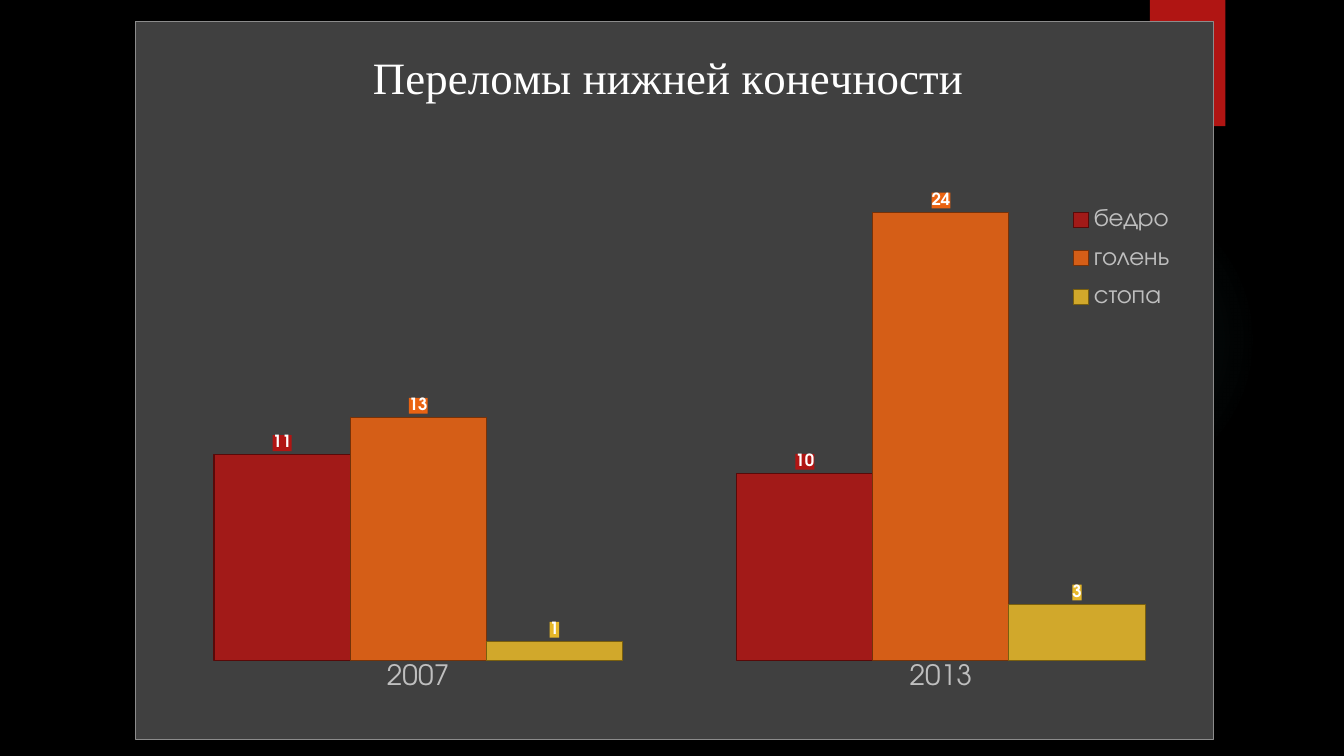
import lxml.etree
import pptx
import pptx.chart.data
import pptx.dml.color
import pptx.enum.chart
import pptx.enum.shapes
import pptx.oxml
import pptx.oxml.ns
import pptx.util

Cm, Pt, qn = pptx.util.Cm, pptx.util.Pt, pptx.oxml.ns.qn
XL = pptx.enum.chart
SHAPE = pptx.enum.shapes.MSO_SHAPE
NS = ('xmlns:a="http://schemas.openxmlformats.org/drawingml/2006/main" '
      'xmlns:c="http://schemas.openxmlformats.org/drawingml/2006/chart"')
FONT = "TeX Gyre Adventor"
WHITE, GREY = "FFFFFF", "BFBFBF"
YEARS = ["2007", "2013"]
SERIES = [
    ("бедро", (11, 10), "B01513", "580A09"),
    ("голень", (13, 24), "EA6312", "753209"),
    ("стопа", (1, 3), "E6B729", "795F0E"),
]


def rgb(color):
    """Turn a hex string into a colour."""
    return pptx.dml.color.RGBColor.from_string(color)


def set_fill(fill, color):
    """Make a fill solid in the given colour."""
    fill.solid()
    fill.fore_color.rgb = rgb(color)


def set_font(font, size, color, name=FONT, bold=False):
    """Set size, colour, typeface and weight of a font."""
    font.size, font.name, font.bold = Pt(size), name, bold
    font.color.rgb = rgb(color)


def shape_props(color, line=""):
    """Build chart shape properties with a solid fill and an optional line."""
    return pptx.oxml.parse_xml(
        f'<c:spPr {NS}><a:solidFill><a:srgbClr val="{color}"/></a:solidFill>{line}</c:spPr>')


def set_layout(parent, index, x, y, w, h, inner=False):
    """Place a chart part by fractions of the chart area."""
    for old in parent.findall(qn("c:layout")):
        parent.remove(old)
    target = '<c:layoutTarget val="inner"/>' if inner else ""
    modes = '<c:xMode val="edge"/><c:yMode val="edge"/>'
    sizes = "".join(f'<c:{k} val="{v}"/>' for k, v in zip("xywh", (x, y, w, h)))
    parent.insert(index, pptx.oxml.parse_xml(
        f"<c:layout {NS}><c:manualLayout>{target}{modes}{sizes}</c:manualLayout></c:layout>"))


def add_plain_shape(s, kind, x, y, w, h):
    """Add a shape without line or shadow."""
    sp = s.shapes.add_shape(kind, Cm(x), Cm(y), Cm(w), Cm(h))
    sp.shadow.inherit = False
    sp.line.fill.background()
    return sp


def add_backdrop(s, x, y):
    """Draw the faint round glow and the red tab from the given corner."""
    glow = add_plain_shape(s, SHAPE.OVAL, x, y + 4.65, 7.82, 7.82)
    stops = "".join(
        f'<a:gs pos="{pos}000"><a:srgbClr val="50B9C1"><a:alpha val="{alpha}000"/></a:srgbClr></a:gs>'
        for pos, alpha in ((0, 7), (36, 6), (69, 0)))
    glow._element.spPr.find(qn("a:prstGeom")).addnext(pptx.oxml.parse_xml(
        f'<a:gradFill {NS}><a:gsLst>{stops}</a:gsLst><a:path path="circle">'
        '<a:fillToRect l="50000" t="50000" r="50000" b="50000"/></a:path></a:gradFill>'))
    tab = add_plain_shape(s, SHAPE.RECTANGLE, x + 5.08, y, 1.9, 3.18)
    set_fill(tab.fill, "B01513")


def format_series(series, color, outline):
    """Colour one series and its value labels."""
    set_fill(series.format.fill, color)
    clr = series.format.fill._xPr.find(".//" + qn("a:srgbClr"))
    lxml.etree.SubElement(clr, qn("a:alpha"), val="88000")
    series.format.line.color.rgb = rgb(outline)
    series.format.line.width = Pt(0.75)
    labels = series.data_labels
    labels.show_value = True
    labels.position = XL.XL_LABEL_POSITION.OUTSIDE_END
    set_font(labels.font, 12, WHITE, bold=True)
    labels._element.find(qn("c:txPr")).addprevious(shape_props(color))


def format_axes(chart):
    """Show only the years and fix the hidden value scale."""
    years, values = chart.category_axis, chart.value_axis
    years.major_tick_mark = years.minor_tick_mark = XL.XL_TICK_MARK.NONE
    years.format.line.fill.background()
    set_font(years.tick_labels.font, 20, GREY)
    values.visible = values.has_major_gridlines = False
    values.minimum_scale, values.maximum_scale = 0, 30


def add_fracture_chart(s, x, y, w, h):
    """Add the column chart of fractures in the given box."""
    data = pptx.chart.data.CategoryChartData()
    data.categories = YEARS
    for name, counts, _, _ in SERIES:
        data.add_series(name, counts)
    chart = s.shapes.add_chart(XL.XL_CHART_TYPE.COLUMN_CLUSTERED,
                               Cm(x), Cm(y), Cm(w), Cm(h), data).chart
    set_font(chart.font, 10, WHITE)
    border = '<a:ln w="6350"><a:solidFill><a:srgbClr val="8C8C8C"/></a:solidFill></a:ln>'
    chart._chartSpace.find(qn("c:txPr")).addprevious(shape_props("404040", border))

    p = chart.chart_title.text_frame.paragraphs[0]
    p.text = "Переломы нижней конечности "
    set_font(p.font, 32, WHITE, "Times New Roman")

    plot = chart.plots[0]
    plot.gap_width, plot.overlap, plot.vary_by_categories = 84, 0, False
    for series, (_, _, color, outline) in zip(plot.series, SERIES):
        format_series(series, color, outline)
    format_axes(chart)
    set_layout(chart._chartSpace.chart.plotArea, 0, 0.02, 0.11, 0.97, 0.78, inner=True)

    chart.has_legend = True
    legend = chart.legend
    legend.position = XL.XL_LEGEND_POSITION.RIGHT
    legend.include_in_layout = False
    set_font(legend.font, 18, GREY)
    set_layout(legend._element, 1, 0.86, 0.24, 0.11, 0.18)


def main():
    """Build and save the slide."""
    prs = pptx.Presentation()
    prs.slide_width, prs.slide_height = Cm(33.87), Cm(19.05)
    s = prs.slides.add_slide(prs.slide_layouts[6])
    set_fill(s.background.fill, "000000")
    add_backdrop(s, 23.9, 0)
    add_fracture_chart(s, 3.4, 0.53, 27.18, 18.11)
    prs.save("out.pptx")


if __name__ == "__main__":
    main()
